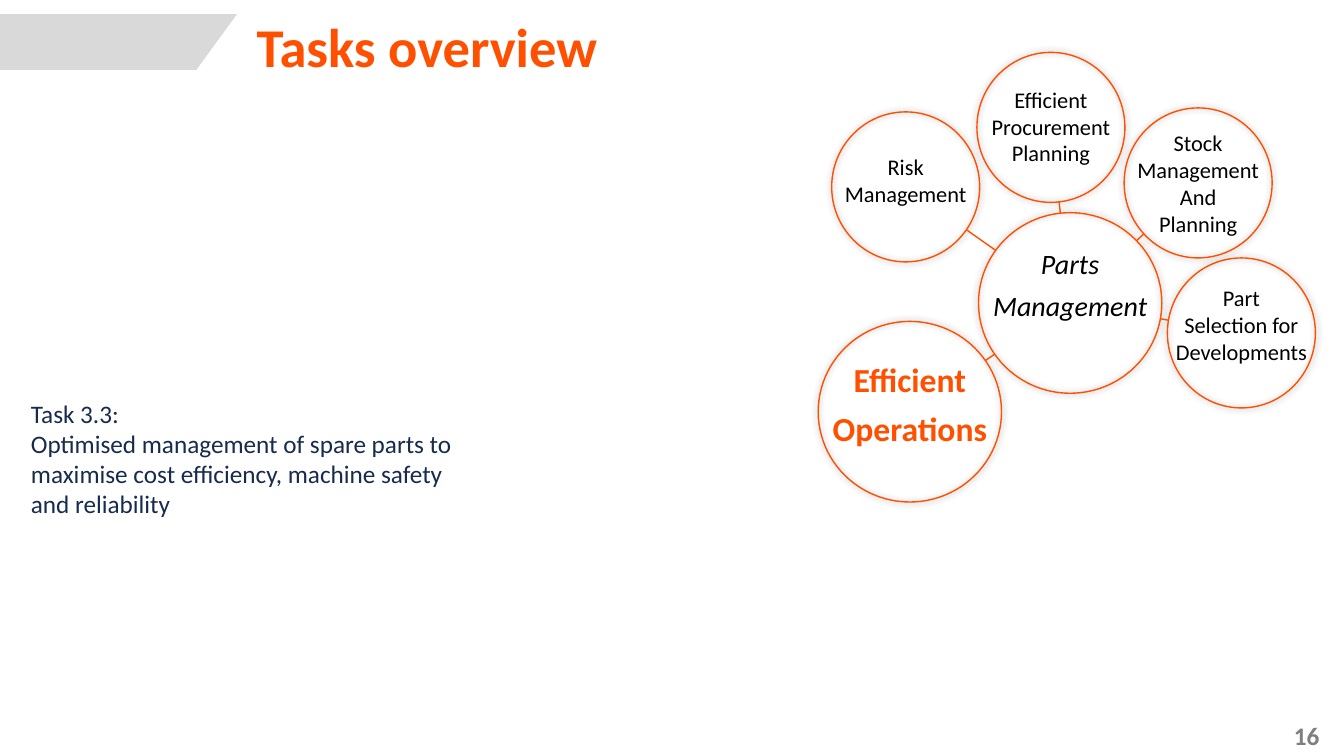
from dataclasses import dataclass
from math import hypot

from lxml import etree
from pptx import Presentation
from pptx import util as u
from pptx.dml.color import RGBColor
from pptx.enum import shapes, text
from pptx.oxml.ns import qn


@dataclass(frozen=True)
class Theme:
    font: str = "Calibri"
    accent: str = "FE5000"
    band: str = "D9D9D9"
    page: str = "7F7F7F"
    task: str = "172B4D"
    black: str = "000000"
    title_size: int = 39
    focus_size: int = 24
    hub_size: int = 20
    body_size: int = 18
    label_size: int = 16
    line_width: int = 1


@dataclass(frozen=True)
class Circle:
    left: float
    top: float
    width: float
    height: float
    text_top: float
    lines: tuple

    @property
    def center(self):
        return self.left + self.width / 2, self.top + self.height / 2

    def edge_towards(self, other):
        """Return the point of the outline that faces the other circle."""
        x, y = self.center
        dx, dy = other.center[0] - x, other.center[1] - y
        scale = 1 / hypot(dx / (self.width / 2), dy / (self.height / 2))
        return x + dx * scale, y + dy * scale


class SlideBuilder:
    def __init__(self, slide, theme):
        self.slide = slide
        self.theme = theme

    def band(self, points):
        start, *rest = [(u.Cm(x), u.Cm(y)) for x, y in points]
        builder = self.slide.shapes.build_freeform(*start)
        builder.add_line_segments(rest, close=True)
        shape = builder.convert_to_shape()
        shape.shadow.inherit = False
        shape.fill.solid()
        shape.fill.fore_color.rgb = RGBColor.from_string(self.theme.band)
        shape.line.fill.background()

    def text(self, box, lines, size, color, align=text.PP_ALIGN.LEFT, bold=False,
             italic=False, wrap=True, gap=0, spacing=None):
        """Write one paragraph per line, with gap points between paragraphs."""
        frame = self.slide.shapes.add_textbox(*map(u.Cm, box)).text_frame
        frame.word_wrap = wrap
        for index, line in enumerate(lines):
            paragraph = frame.add_paragraph() if index else frame.paragraphs[0]
            paragraph.alignment = align
            if index and gap:
                paragraph.space_before = u.Pt(gap)
            if spacing:
                paragraph.line_spacing = spacing
            run = paragraph.add_run()
            run.text = line
            run.font.name = self.theme.font
            run.font.size = u.Pt(size)
            run.font.bold = bold
            run.font.italic = italic
            run.font.color.rgb = RGBColor.from_string(color)

    def circle(self, circle, size, color, **style):
        """Draw the glowing outline and its label, whose box overhangs on both sides."""
        overhang = 0.5
        height = len(circle.lines) * size * 0.043 + 0.25
        label = (circle.left - overhang, circle.text_top,
                 circle.width + 2 * overhang, height)
        self.text(label, circle.lines, size, color, text.PP_ALIGN.CENTER,
                  wrap=False, **style)
        box = map(u.Cm, (circle.left, circle.top, circle.width, circle.height))
        shape = self.slide.shapes.add_shape(shapes.MSO_SHAPE.OVAL, *box)
        shape.fill.background()
        self.outline(shape.line)
        shape.shadow.inherit = False
        effects = shape._element.spPr.find(qn("a:effectLst"))
        shadow = etree.SubElement(effects, qn("a:outerShdw"), blurRad=str(u.Pt(5)),
                                  dist="0", dir="0", algn="ctr", rotWithShape="0")
        shade = etree.SubElement(shadow, qn("a:srgbClr"), val=self.theme.black)
        etree.SubElement(shade, qn("a:alpha"), val="40000")

    def link(self, first, second):
        ends = (*first.edge_towards(second), *second.edge_towards(first))
        connector = self.slide.shapes.add_connector(
            shapes.MSO_CONNECTOR.STRAIGHT, *map(u.Cm, ends))
        self.outline(connector.line)
        etree.SubElement(connector._element.spPr, qn("a:effectLst"))

    def outline(self, line):
        line.color.rgb = RGBColor.from_string(self.theme.accent)
        line.width = u.Pt(self.theme.line_width)


SMALL = (3.73, 3.78)
LARGE = (4.62, 4.55)
HUB = Circle(24.66, 5.36, *LARGE, 6.08, ("Parts", "Management"))
FOCUS = Circle(20.62, 8.1, *LARGE, 8.93, ("Efficient", "Operations"))
TOPICS = [
    Circle(20.96, 2.82, *SMALL, 3.73, ("Risk", "Management")),
    Circle(29.42, 6.5, *SMALL, 7.04, ("Part", "Selection for", "Developments")),
    Circle(24.62, 1.32, *SMALL, 2.04, ("Efficient", "Procurement", "Planning")),
    Circle(28.33, 2.72, *SMALL, 3.13, ("Stock", "Management", "And", "Planning")),
]
TASK = [
    "Task 3.3:",
    "Optimised management of spare parts to",
    "maximise cost efficiency, machine safety",
    "and reliability",
]


def main():
    presentation = Presentation()
    presentation.slide_width = u.Cm(33.87)
    presentation.slide_height = u.Cm(19.05)
    theme = Theme()
    builder = SlideBuilder(
        presentation.slides.add_slide(presentation.slide_layouts[6]), theme)

    builder.band([(0, 0.36), (5.97, 0.36), (4.95, 1.76), (0, 1.76)])
    builder.text((30.48, 18.03, 3.02, 1.02), ["16"], theme.body_size, theme.page,
                 text.PP_ALIGN.RIGHT, bold=True)
    builder.text((6.22, 0.38, 25.2, 1.42), ["Tasks overview"], theme.title_size,
                 theme.accent, bold=True, spacing=0.9)

    builder.circle(FOCUS, theme.focus_size, theme.accent, bold=True, gap=6)
    builder.circle(HUB, theme.hub_size, theme.black, italic=True, gap=6)
    for topic in TOPICS:
        builder.circle(topic, theme.label_size, theme.black)
    for circle in [FOCUS, *TOPICS]:
        builder.link(circle, HUB)

    builder.text((0.53, 9.9, 11.38, 3.3), TASK, theme.body_size, theme.task, wrap=False)
    presentation.save("out.pptx")


if __name__ == "__main__":
    main()
